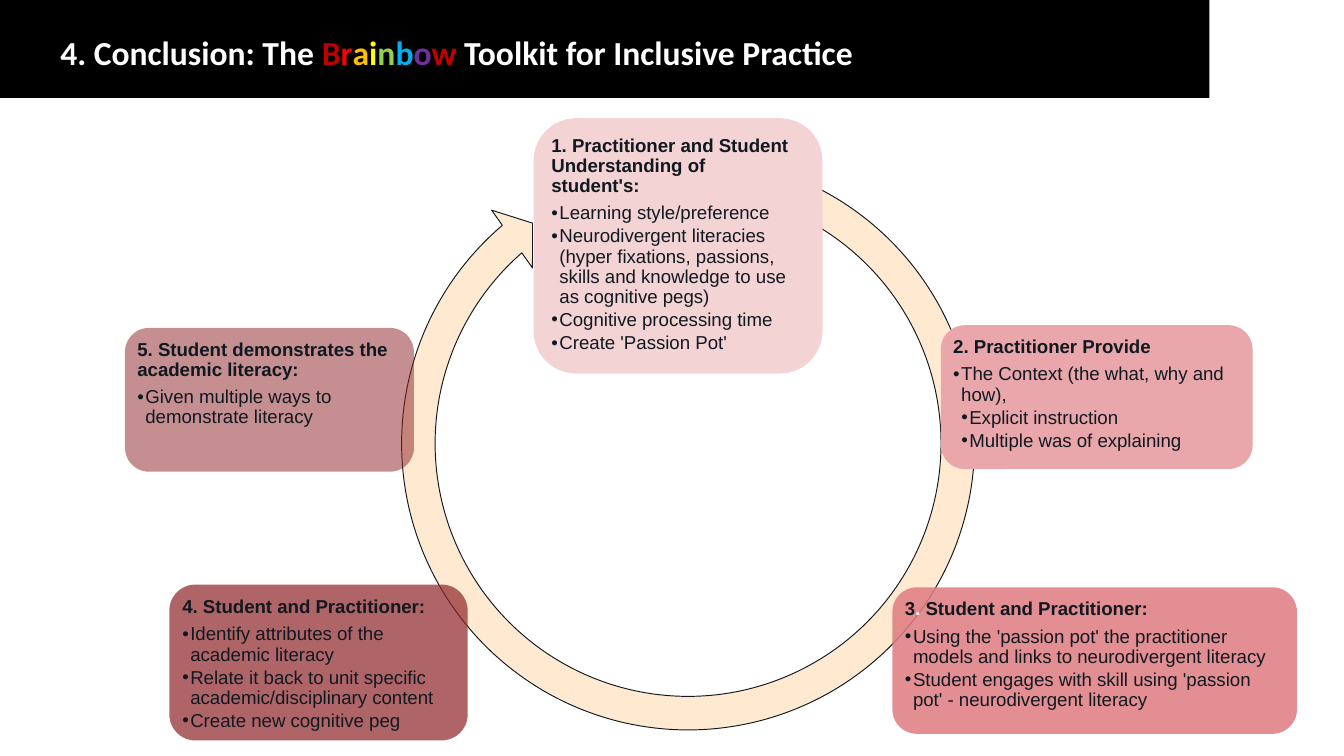
from collections import namedtuple

from lxml.etree import SubElement
from pptx import Presentation
from pptx.dml.color import RGBColor
from pptx.enum.shapes import MSO_SHAPE
from pptx.enum.text import MSO_ANCHOR, PP_ALIGN
from pptx.oxml.ns import qn
from pptx.util import Emu, Inches, Pt

BLACK = RGBColor(0x00, 0x00, 0x00)
WHITE = RGBColor(0xFF, 0xFF, 0xFF)
INK = RGBColor(0x10, 0x19, 0x20)
CREAM = RGBColor(0xFF, 0xEA, 0xD1)
BLUSH = RGBColor(0xF4, 0xD3, 0xD5)
PINK = RGBColor(0xE9, 0xA7, 0xAB)
ROSE = RGBColor(0xDF, 0x7C, 0x81)
WINE = RGBColor(0x8E, 0x23, 0x28)
DARK_RED = RGBColor(0xC0, 0x00, 0x00)
RED = RGBColor(0xFF, 0x00, 0x00)
AMBER = RGBColor(0xFF, 0xC0, 0x00)
YELLOW = RGBColor(0xFF, 0xFF, 0x00)
GREEN = RGBColor(0x92, 0xD0, 0x50)
BLUE = RGBColor(0x00, 0xB0, 0xF0)
PURPLE = RGBColor(0x70, 0x30, 0xA0)
RAINBOW = [DARK_RED, RED, AMBER, YELLOW, GREEN, BLUE, PURPLE, DARK_RED]

COLUMNS = 100
ROWS = 56.25
INDENT = Inches(0.06)

Box = namedtuple("Box", "left top width height")
Card = namedtuple("Card", "place color opacity heading bullets")

CARDS = [
    Card((39.7, 8.8, 21.5, 19), BLUSH, 100,
         [("1. Practitioner and Student Understanding of student's:", INK)],
         [(1, "Learning style/preference"),
          (1, "Neurodivergent literacies (hyper fixations, passions, "
              "skills and knowledge to use as cognitive pegs)"),
          (1, "Cognitive processing time"),
          (1, "Create 'Passion Pot'")]),
    Card((70, 24.2, 23.2, 10.7), PINK, 100,
         [("2. Practitioner Provide", INK)],
         [(1, "The Context (the what, why and how),"),
          (2, "Explicit instruction"),
          (2, "Multiple was of explaining")]),
    Card((66.4, 43.7, 30.1, 10.9), ROSE, 86,
         [("3", INK), (". ", WHITE), ("Student and Practitioner:", INK)],
         [(1, "Using the 'passion pot' the practitioner models "
              "and links to neurodivergent literacy"),
          (1, "Student engages with skill using 'passion pot' "
              "- neurodivergent literacy")]),
    Card((12.6, 43.5, 22.2, 11.6), WINE, 70,
         [("4. Student and Practitioner:", INK)],
         [(1, "Identify attributes of the academic literacy"),
          (1, "Relate it back to unit specific academic/disciplinary content"),
          (1, "Create new cognitive peg")]),
    Card((9.3, 24.4, 21.5, 10.7), WINE, 51,
         [("5. Student demonstrates the academic literacy:", INK)],
         [(1, "Given multiple ways to demonstrate literacy")]),
]


def grid_box(deck, left, top, width, height):
    column = deck.slide_width / COLUMNS
    row = deck.slide_height / ROWS
    return Box(round(left * column), round(top * row),
               round(width * column), round(height * row))


def add_filled(page, kind, box, color, opacity=100):
    shape = page.shapes.add_shape(kind, *box)
    shape.shadow.inherit = False
    shape.fill.solid()
    shape.fill.fore_color.rgb = color
    shape.line.fill.background()
    if opacity < 100:
        tint = shape.fill._xPr.find(qn("a:solidFill"))[0]
        SubElement(tint, qn("a:alpha"), val=str(opacity * 1000))
    return shape


def add_span(para, text, font, size, color, bold):
    span = para.add_run()
    span.text = text
    span.font.name = font
    span.font.size = Pt(size)
    span.font.bold = bold
    span.font.color.rgb = color


def add_bullet(para, level):
    para.level = level
    properties = para._p.get_or_add_pPr()
    properties.set("marL", str(INDENT * level))
    properties.set("indent", str(-INDENT))
    SubElement(properties, qn("a:buFont"), typeface="Arial")
    SubElement(properties, qn("a:buChar"), char="•")


def add_header(page, box):
    band = Box(box.left, box.top, round(box.width * 0.9), box.height)
    add_filled(page, MSO_SHAPE.RECTANGLE, band, BLACK)
    title = page.shapes.add_textbox(
        box.left + round(box.width * 0.035), box.top + round(box.height * 0.055),
        round(box.width * 0.862), box.height)
    frame = title.text_frame
    frame.word_wrap = True
    frame.vertical_anchor = MSO_ANCHOR.MIDDLE
    para = frame.paragraphs[0]
    para.line_spacing = 0.9
    spans = [("4. Conclusion: The ", WHITE), *zip("Brainbow", RAINBOW),
             (" Toolkit for Inclusive Practice", WHITE)]
    for text, color in spans:
        add_span(para, text, "Calibri", 18, color, True)


def add_cycle(page, box):
    cycle = add_filled(page, MSO_SHAPE.CIRCULAR_ARROW, box, CREAM)
    cycle.line.color.rgb = INK
    cycle.line.width = Pt(0.5)
    for index, value in enumerate([0.055, 3.307, 137.558, 173.982, 0.058]):
        cycle.adjustments[index] = value


def add_card(page, box, card):
    shape = add_filled(page, MSO_SHAPE.ROUNDED_RECTANGLE, box,
                       card.color, card.opacity)
    frame = shape.text_frame
    frame.word_wrap = True
    frame.vertical_anchor = MSO_ANCHOR.TOP
    frame.margin_left = frame.margin_top = frame.margin_bottom = Inches(0.04)
    frame.margin_right = Inches(0.1)
    lines = [(0, card.heading)]
    lines += [(level, [(text, INK)]) for level, text in card.bullets]
    for level, spans in lines:
        para = frame.add_paragraph() if level else frame.paragraphs[0]
        if level:
            add_bullet(para, level)
        para.alignment = PP_ALIGN.LEFT
        para.line_spacing = 0.9
        para.space_after = Pt(1.6 if level else 3.7)
        for text, color in spans:
            add_span(para, text, "Arial", 10, color, level == 0)


def main():
    deck = Presentation()
    deck.slide_width = Inches(10)
    deck.slide_height = Emu(deck.slide_width * 9 // 16)
    page = deck.slides.add_slide(deck.slide_layouts[6])
    add_header(page, grid_box(deck, 0, 0, COLUMNS, 7.3))
    add_cycle(page, grid_box(deck, 28.5, 10.3, 45.4, 45.4))
    for card in CARDS:
        add_card(page, grid_box(deck, *card.place), card)
    deck.save("out.pptx")


if __name__ == "__main__":
    main()
